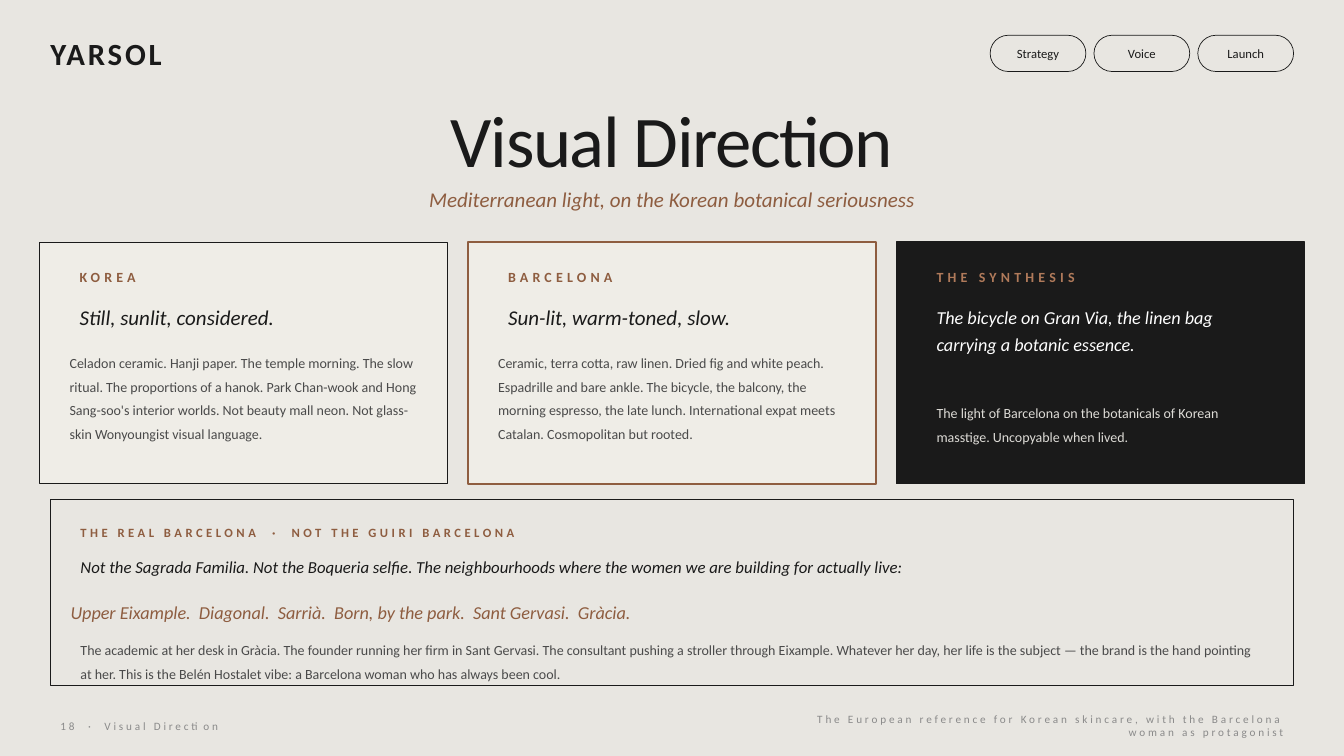
from pptx import Presentation
from pptx.util import Inches, Pt
from pptx.dml.color import RGBColor
from pptx.enum.shapes import MSO_SHAPE as Kind
from pptx.enum.text import MSO_ANCHOR as Anchor, MSO_AUTO_SIZE as Fit, PP_ALIGN as Align

FONT = "Calibri"
SPACE = 0.226
HUES = {
    "page": "E8E6E1",
    "panel": "EFEDE7",
    "ink": "1A1A1A",
    "clay": "8E5D40",
    "glow": "B07A5A",
    "body": "4A4A4A",
    "pale": "DDDBD6",
    "mute": "8A8A8A",
    "white": "FFFFFF",
}
CARDS = [
    dict(head="KOREA", lead="Still, sunlit, considered.", edge="ink", wide=0.5,
         note="Celadon ceramic. Hanji paper. The temple morning. The slow ritual. "
              "The proportions of a hanok. Park Chan-wook and Hong Sang-soo's interior "
              "worlds. Not beauty mall neon. Not glass-skin Wonyoungist visual language."),
    dict(head="BARCELONA", lead="Sun-lit, warm-toned, slow.", edge="clay", wide=1.5,
         note="Ceramic, terra cotta, raw linen. Dried fig and white peach. Espadrille and "
              "bare ankle. The bicycle, the balcony, the morning espresso, the late lunch. "
              "International expat meets Catalan. Cosmopolitan but rooted."),
    dict(head="THE SYNTHESIS", edge="ink", wide=1, dark=True,
         lead="The bicycle on Gran Via, the linen bag carrying a botanic essence.",
         note="The light of Barcelona on the botanicals of Korean masstige. "
              "Uncopyable when lived."),
]
AREAS = ["Upper Eixample.", "Diagonal.", "Sarrià.", "Born, by the park.",
         "Sant Gervasi.", "Gràcia."]


def tint(name):
    return RGBColor.from_string(HUES[name])


def add_run(para, text, size, hue, bold, slant, track):
    run = para.add_run()
    run.text = text
    font = run.font
    font.name, font.size = FONT, Pt(size)
    font.bold, font.italic = bold, slant
    font.color.rgb = tint(hue)
    if track:
        run._r.get_or_add_rPr().set("spc", str(round(track * 100)))


def fill_text(shape, parts, size, hue, bold=False, slant=False, track=0,
              align=Align.LEFT, anchor=Anchor.MIDDLE, lead=None, pad=0.1):
    frame = shape.text_frame
    frame.word_wrap, frame.auto_size = True, Fit.NONE
    frame.vertical_anchor = anchor
    frame.margin_left = frame.margin_right = Inches(pad)
    frame.margin_top = frame.margin_bottom = Inches(pad / 2)
    para = frame.paragraphs[0]
    para.alignment = align
    if lead:
        para.line_spacing = lead
    for spot, part in enumerate([parts] if isinstance(parts, str) else parts):
        if spot:
            add_run(para, " ", size, hue, bold, slant, 2 * track + size * SPACE)
        add_run(para, part, size, hue, bold, slant, track)


def add_text(slide, box, parts, size, hue, **style):
    shape = slide.shapes.add_textbox(*map(Inches, box))
    fill_text(shape, parts, size, hue, **style)


def add_box(slide, box, fill, edge="ink", wide=0.5, kind=Kind.RECTANGLE):
    shape = slide.shapes.add_shape(kind, *map(Inches, box))
    shape.shadow.inherit = False
    shape.fill.solid()
    shape.fill.fore_color.rgb = tint(fill)
    shape.line.color.rgb = tint(edge)
    shape.line.width = Pt(wide)
    return shape


def draw_top(slide, box):
    left, top, width, height = box
    add_text(slide, (left, top, 2, height), "YARSOL", 22, "ink", bold=True, track=2, pad=0)
    names, wide, gap = ["Strategy", "Voice", "Launch"], 0.95, 0.08
    start = left + width - len(names) * (wide + gap) + gap
    for spot, name in enumerate(names):
        pill = add_box(slide, (start + spot * (wide + gap), top + 0.05, wide, 0.36),
                       "page", kind=Kind.ROUNDED_RECTANGLE)
        pill.adjustments[0] = 0.5
        fill_text(pill, name, 9, "ink", align=Align.CENTER)


def draw_title(slide, box):
    left, top, width, height = box
    title = slide.shapes.title
    title.left, title.top = Inches(left), Inches(top)
    title.width, title.height = Inches(width), Inches(height)
    fill_text(title, "Visual Direction", 52, "ink", track=-1, align=Align.CENTER, pad=0)
    add_text(slide, (left, top + 0.83, width, 0.4),
             "Mediterranean light, on the Korean botanical seriousness",
             15, "clay", slant=True, align=Align.CENTER)


def draw_card(slide, box, head, lead, note, edge, wide, dark=False):
    left, top, width, _ = box
    left, width = left + 0.3, width - 0.6
    add_box(slide, box, "ink" if dark else "panel", edge, wide)
    add_text(slide, (left, top + 0.2, width, 0.3), head, 10,
             "glow" if dark else "clay", bold=True, track=3)
    if dark:
        add_text(slide, (left, top + 0.55, width, 0.8), lead, 13, "white",
                 slant=True, anchor=Anchor.TOP, lead=1.2)
        add_text(slide, (left, top + 1.5, width, 0.8), note, 10, "pale",
                 anchor=Anchor.TOP, lead=1.4)
    else:
        add_text(slide, (left, top + 0.55, width, 0.4), lead, 15, "ink", slant=True)
        add_text(slide, (left, top + 1.05, width, 1.25), note, 10, "body",
                 anchor=Anchor.TOP, lead=1.4, pad=0)


def draw_cards(slide, box):
    left, top, width, height = box
    gap = 0.2
    wide = (width - gap * (len(CARDS) - 1)) / len(CARDS)
    for spot, card in enumerate(CARDS):
        draw_card(slide, (left + spot * (wide + gap), top, wide, height), **card)


def draw_panel(slide, box):
    left, top, width, _ = box
    add_box(slide, box, "page")
    left, width = left + 0.2, width - 0.4
    add_text(slide, (left, top + 0.18, width, 0.3),
             ["THE REAL BARCELONA", "·", "NOT THE GUIRI BARCELONA"],
             9, "clay", bold=True, track=2.5)
    add_text(slide, (left, top + 0.5, width, 0.35),
             "Not the Sagrada Familia. Not the Boqueria selfie. The neighbourhoods "
             "where the women we are building for actually live:", 12, "ink", slant=True)
    add_text(slide, (left, top + 0.95, width, 0.35), AREAS, 13, "clay", slant=True, pad=0)
    add_text(slide, (left, top + 1.3, width, 0.5),
             "The academic at her desk in Gràcia. The founder running her firm in Sant "
             "Gervasi. The consultant pushing a stroller through Eixample. Whatever her "
             "day, her life is the subject — the brand is the hand pointing at her. This "
             "is the Belén Hostalet vibe: a Barcelona woman who has always been cool.",
             10, "body", anchor=Anchor.TOP, lead=1.4)


def draw_foot(slide, box):
    left, top, width, height = box
    half = 5
    add_text(slide, (left, top, half, height), ["18", "·", "Visual Direction"],
             8, "mute", track=2)
    add_text(slide, (left + width - half, top, half, height),
             "The European reference for Korean skincare, with the Barcelona woman "
             "as protagonist", 8, "mute", track=2, align=Align.RIGHT)


def main():
    deck = Presentation()
    deck.slide_width, deck.slide_height = Inches(13.33), Inches(7.5)
    slide = deck.slides.add_slide(deck.slide_layouts[5])
    slide.background.fill.solid()
    slide.background.fill.fore_color.rgb = tint("page")
    left, width = 0.5, 12.33
    draw_top(slide, (left, 0.3, width, 0.45))
    draw_title(slide, (left, 0.95, width, 0.85))
    draw_cards(slide, (0.39, 2.4, 12.55, 2.4))
    draw_panel(slide, (left, 4.95, width, 1.85))
    draw_foot(slide, (left, 7.05, width, 0.3))
    deck.save("out.pptx")


if __name__ == "__main__":
    main()
